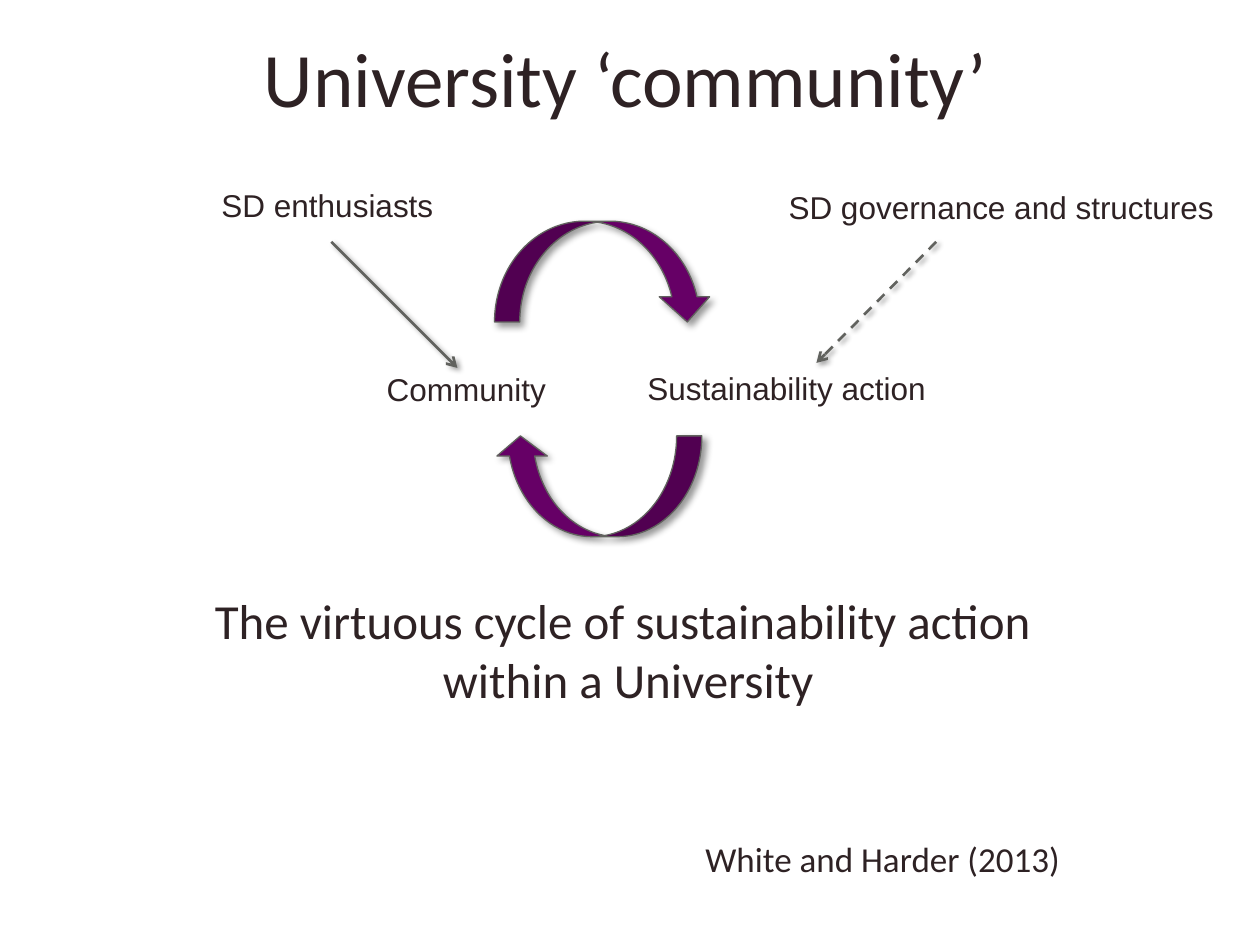
from dataclasses import dataclass

from lxml.etree import SubElement
from pptx import Presentation
from pptx.dml.color import RGBColor
from pptx.enum.dml import MSO_LINE_DASH_STYLE as Dash
from pptx.enum.shapes import MSO_CONNECTOR as Connector, MSO_SHAPE as Shape
from pptx.enum.text import MSO_AUTO_SIZE as AutoSize, PP_ALIGN as Align
from pptx.oxml.ns import qn
from pptx.util import Inches, Pt

COLUMNS, ROWS = 100, 75


@dataclass(frozen=True)
class Theme:
    ink: str = "2E2224"
    arrow: str = "660066"
    outline: str = "61625E"
    shadow: str = "000000"
    heading_font: str = "Calibri"
    label_font: str = "Arial"
    title: int = 44
    caption: int = 28
    source: int = 20
    label: int = 18


class SlideBuilder:
    """Draws on one slide; places are in columns and rows of the grid."""

    def __init__(self, deck, theme):
        self.theme = theme
        self.page = deck.slides.add_slide(deck.slide_layouts[6])
        self.column = deck.slide_width / COLUMNS
        self.row = deck.slide_height / ROWS

    def place(self, x, y, *size):
        """Turn grid x, y pairs into slide lengths."""
        units = (self.column, self.row) * 2
        return [round(value * unit) for value, unit in zip((x, y, *size), units)]

    def text(self, area, lines, size, font, align=Align.LEFT, wrap=True):
        box = self.page.shapes.add_textbox(*self.place(*area))
        frame = box.text_frame
        frame.word_wrap = wrap
        frame.auto_size = AutoSize.SHAPE_TO_FIT_TEXT
        frame.text = "\n".join(lines)
        for para in frame.paragraphs:
            para.alignment = align
            para.font.size = Pt(size)
            para.font.name = font
            para.font.color.rgb = RGBColor.from_string(self.theme.ink)

    def label(self, area, words, wrap=True):
        self.text(area, [words], self.theme.label, self.theme.label_font, wrap=wrap)

    def heading(self, area, lines, size, align=Align.CENTER):
        self.text(area, lines, size, self.theme.heading_font, align)

    def outline(self, item, width):
        item.line.color.rgb = RGBColor.from_string(self.theme.outline)
        item.line.width = Pt(width)

    def shadow(self, item, blur, distance):
        effects = SubElement(item._element.spPr, qn("a:effectLst"))
        outer = SubElement(effects, qn("a:outerShdw"), blurRad=str(Pt(blur)),
                           dist=str(Pt(distance)), dir="2700000", rotWithShape="0")
        color = SubElement(outer, qn("a:srgbClr"), val=self.theme.shadow)
        SubElement(color, qn("a:alpha"), val="40000")

    def cycle_arrow(self, area, rotation, head=0.25):
        arrow = self.page.shapes.add_shape(Shape.CURVED_LEFT_ARROW, *self.place(*area))
        arrow.rotation = rotation
        arrow.adjustments[2] = head
        arrow.fill.solid()
        arrow.fill.fore_color.rgb = RGBColor.from_string(self.theme.arrow)
        self.outline(arrow, 0.75)
        self.shadow(arrow, 4, 3)

    def pointer(self, start, end, dash=None):
        line = self.page.shapes.add_connector(
            Connector.STRAIGHT, *self.place(*start), *self.place(*end))
        self.outline(line, 1.5)
        if dash:
            line.line.dash_style = dash
        SubElement(line.line._get_or_add_ln(), qn("a:tailEnd"), type="arrow")
        self.shadow(line, 3, 2)


def main():
    deck = Presentation()
    deck.slide_width, deck.slide_height = Inches(10), Inches(7.5)
    theme = Theme()
    slide = SlideBuilder(deck, theme)

    slide.label((50.4, 28.8, 28.9, 4), "Sustainability action")
    slide.label((29.7, 28.9, 18.2, 4), "Community")
    slide.cycle_arrow((43.5, 30.4, 8, 16.4), 90, head=0.2)
    slide.cycle_arrow((43.9, 12.9, 8, 17.3), 270)

    slide.pointer((26.3, 19.2), (36.3, 29.2))
    slide.label((16.6, 14.3, 19, 4), "SD enthusiasts", wrap=False)
    slide.pointer((74.3, 19.2), (64.8, 28.8), Dash.DASH)
    slide.label((61.6, 14.4, 36.1, 4), "SD governance and structures", wrap=False)

    slide.heading((55, 66, 31.6, 4.4), ["White and Harder (2013)"],
                  theme.source, Align.LEFT)
    slide.heading((7.5, 46.4, 84.7, 10.4),
                  ["The virtuous cycle of sustainability action ", "within a University"],
                  theme.caption)
    slide.heading((12.9, 1.9, 73.5, 8.4), ["University ‘community’"], theme.title)

    deck.save("out.pptx")


if __name__ == "__main__":
    main()
